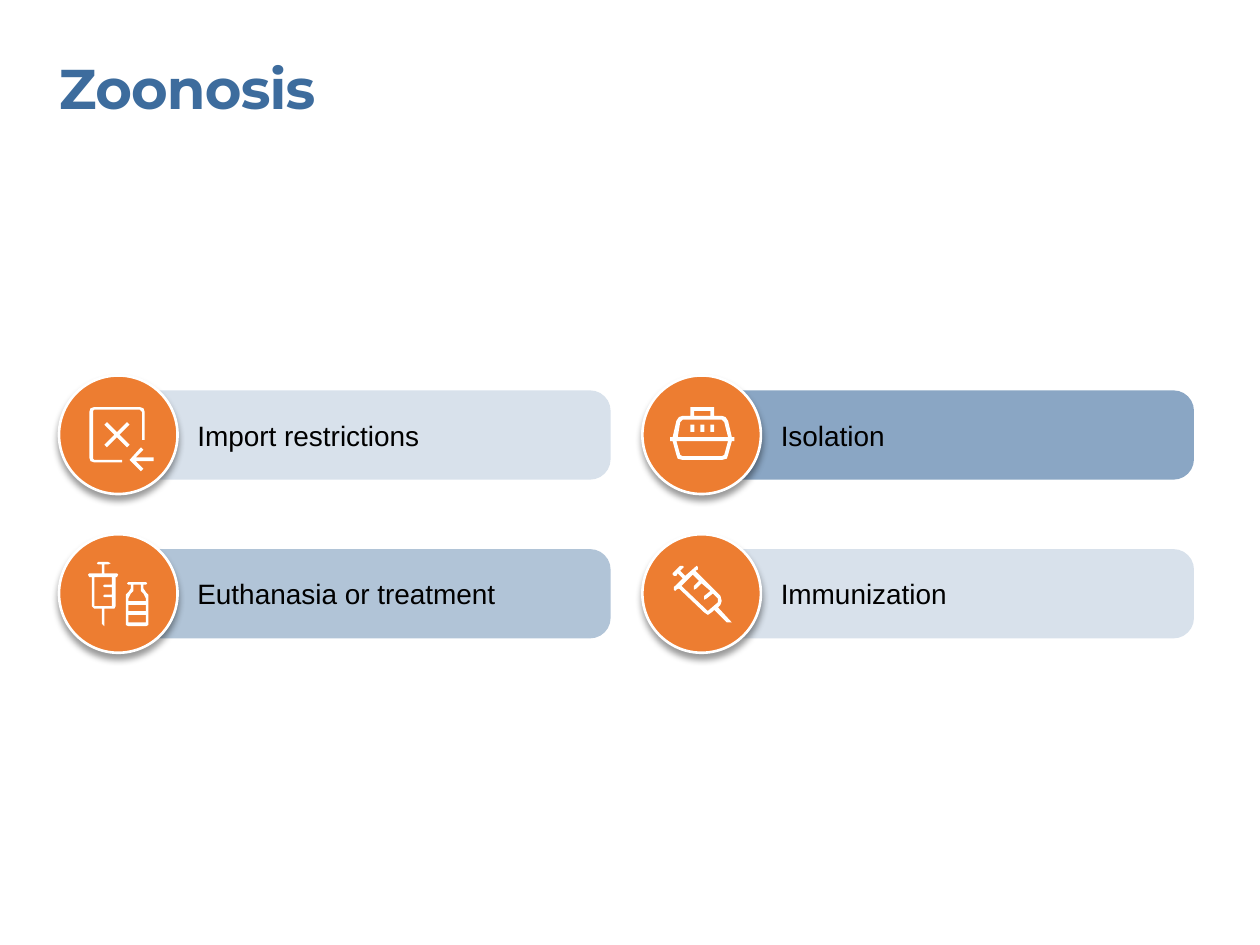
from dataclasses import dataclass

from lxml.etree import SubElement
from pptx import Presentation
from pptx.dml.color import RGBColor as RGB
from pptx.enum.shapes import MSO_SHAPE as SHAPE
from pptx.enum.text import MSO_AUTO_SIZE as AUTO_SIZE
from pptx.oxml.ns import qn
from pptx.util import Cm, Pt


@dataclass(frozen=True)
class Theme:
    blue: RGB = RGB(0x3D, 0x6C, 0x9D)
    orange: RGB = RGB(0xED, 0x7D, 0x31)
    white: RGB = RGB(0xFF, 0xFF, 0xFF)
    black: RGB = RGB(0x00, 0x00, 0x00)
    title_size: Pt = Pt(32)
    label_size: Pt = Pt(16)
    title_font: str = "Montserrat"
    label_font: str = "Arial"


def add_text(left, top, width, height, wording, font_name, size, color):
    box = slide.shapes.add_textbox(left, top, width, height)
    frame = box.text_frame
    frame.word_wrap = True
    frame.auto_size = AUTO_SIZE.SHAPE_TO_FIT_TEXT
    frame.margin_left = frame.margin_right = 0
    frame.margin_top = frame.margin_bottom = 0
    run = frame.paragraphs[0].add_run()
    run.text = wording
    run.font.name = font_name
    run.font.size = size
    run.font.color.rgb = color
    return run


def paint(shape, color):
    shape.shadow.inherit = False
    shape.fill.solid()
    shape.fill.fore_color.rgb = color
    shape.line.fill.background()


no_entry = [
    [(38, 57), (46, 49), (54, 57), (56, 55), (48, 47), (56, 39),
     (54, 37), (46, 45), (38, 37), (36, 39), (44, 47), (36, 55)],
    [(28, 69), (25, 68), (24, 65), (24, 29), (25, 26), (28, 25), (64, 25), (67, 26),
     (68, 29), (68, 51), (66, 51), (66, 29), (65, 28), (64, 27), (28, 27), (27, 28),
     (27, 66), (28, 67), (50, 67), (50, 69)],
    [(65, 57), (67, 59), (61, 65), (75, 65), (75, 68), (61, 68), (67, 74), (65, 76),
     (56, 67)],
]
carrier = [
    [(73, 49), (73, 52), (71, 52), (68, 63), (67, 66), (63, 67), (32, 67), (28, 66),
     (27, 63), (24, 52), (22, 52), (22, 49), (24, 49), (27, 36), (29, 33), (32, 32),
     (38, 32), (38, 25), (57, 25), (57, 32), (63, 32), (66, 33), (68, 36), (71, 49)],
    [(68, 52), (27, 52), (30, 63), (32, 64), (63, 64), (65, 63)],
    [(68, 49), (65, 37), (63, 35), (32, 35), (30, 37), (28, 49)],
    [(54, 32), (54, 28), (41, 28), (41, 32)],
]
syringe_and_vial = [
    [(36, 73), (34, 71), (34, 59), (28, 59), (26, 57), (26, 34), (24, 34), (23, 32),
     (24, 31), (34, 31), (34, 24), (31, 24), (30, 23), (31, 22), (39, 22), (41, 23),
     (39, 24), (36, 24), (36, 31), (46, 31), (47, 32), (46, 34), (45, 34), (45, 57),
     (44, 59), (36, 59)],
    [(28, 57), (42, 57), (42, 50), (36, 50), (35, 49), (36, 48), (42, 48), (42, 42),
     (36, 42), (35, 41), (36, 40), (42, 40), (42, 34), (28, 34)],
    [(55, 73), (53, 72), (53, 48), (55, 46), (57, 43), (57, 40), (55, 40), (54, 39),
     (55, 38), (69, 38), (70, 39), (69, 40), (67, 40), (67, 43), (69, 46), (71, 48),
     (71, 72), (69, 73)],
    [(55, 53), (69, 53), (69, 51), (68, 49), (67, 47), (65, 45), (65, 40), (59, 40),
     (59, 45), (57, 47), (56, 49), (55, 51)],
    [(55, 56), (69, 56), (69, 61), (55, 61)],
    [(55, 64), (69, 64), (69, 70), (55, 70)],
]
syringe = [
    [(25, 44), (25, 42), (32, 35), (28, 31), (27, 33), (25, 33), (24, 32), (24, 31),
     (30, 25), (32, 25), (33, 26), (30, 29), (34, 33), (42, 26), (43, 25), (44, 26),
     (44, 28), (42, 29), (62, 49), (63, 53), (62, 56), (60, 58), (71, 70), (67, 70),
     (57, 60), (55, 62), (52, 64), (49, 62), (29, 43), (27, 44), (26, 45)],
    [(31, 41), (51, 60), (52, 61), (53, 60), (60, 54), (60, 51), (56, 47), (51, 51),
     (49, 52), (49, 49), (54, 45), (47, 39), (43, 43), (41, 44), (41, 41), (45, 37),
     (40, 32)],
]

theme = Theme()
prs = Presentation()
prs.slide_width, prs.slide_height = Cm(25.4), Cm(19.05)
slide = prs.slides.add_slide(prs.slide_layouts[6])

title = add_text(Cm(1.19), Cm(1.07), Cm(21.72), Cm(1.37), "Zoonosis",
                 theme.title_font, theme.title_size, theme.blue)
title.font.bold = True
title._r.get_or_add_rPr().set("spc", "-50")

measures = [
    ("Import restrictions", 20, no_entry),
    ("Isolation", 60, carrier),
    ("Euthanasia or treatment", 40, syringe_and_vial),
    ("Immunization", 20, syringe),
]
icon_unit = Cm(2.54) / 100

for index, (measure, opacity, icon_outlines) in enumerate(measures):
    row, column = divmod(index, 2)
    left = Cm(1.19) + column * Cm(11.76)
    top = Cm(7.57) + row * Cm(3.2)

    bar = slide.shapes.add_shape(SHAPE.ROUNDED_RECTANGLE, left + Cm(1.19),
                                 top + Cm(0.3), Cm(9.93), Cm(1.8))
    bar.adjustments[0] = 0.23
    paint(bar, theme.blue)
    bar_color = bar._element.spPr.find(qn("a:solidFill"))[0]
    SubElement(bar_color, qn("a:alpha"), val=str(opacity * 1000))

    add_text(left + Cm(2.79), top + Cm(0.86), Cm(7.85), Cm(0.69), measure,
             theme.label_font, theme.label_size, theme.black)

    badge = slide.shapes.add_shape(SHAPE.OVAL, left, top, Cm(2.39), Cm(2.39))
    paint(badge, theme.orange)
    badge.line.color.rgb = theme.white
    badge.line.width = Pt(1.5)
    effects = badge._element.spPr.find(qn("a:effectLst"))
    shadow = SubElement(effects, qn("a:outerShdw"), blurRad=str(Pt(4)),
                        dist=str(Pt(3)), dir="5400000", rotWithShape="0")
    shadow_color = SubElement(shadow, qn("a:srgbClr"), val=str(theme.black))
    SubElement(shadow_color, qn("a:alpha"), val="40000")

    pen = slide.shapes.build_freeform(*icon_outlines[0][0], scale=icon_unit)
    pen.add_line_segments(icon_outlines[0][1:], close=True)
    for outline in icon_outlines[1:]:
        pen.move_to(*outline[0])
        pen.add_line_segments(outline[1:], close=True)
    paint(pen.convert_to_shape(left, top), theme.white)

    if icon_outlines is carrier:
        for slot in range(3):
            vent = slide.shapes.add_shape(SHAPE.RECTANGLE, left + Cm(0.97 + 0.2 * slot),
                                          top + Cm(0.99), Cm(0.08), Cm(0.15))
            paint(vent, theme.white)

prs.save("out.pptx")
